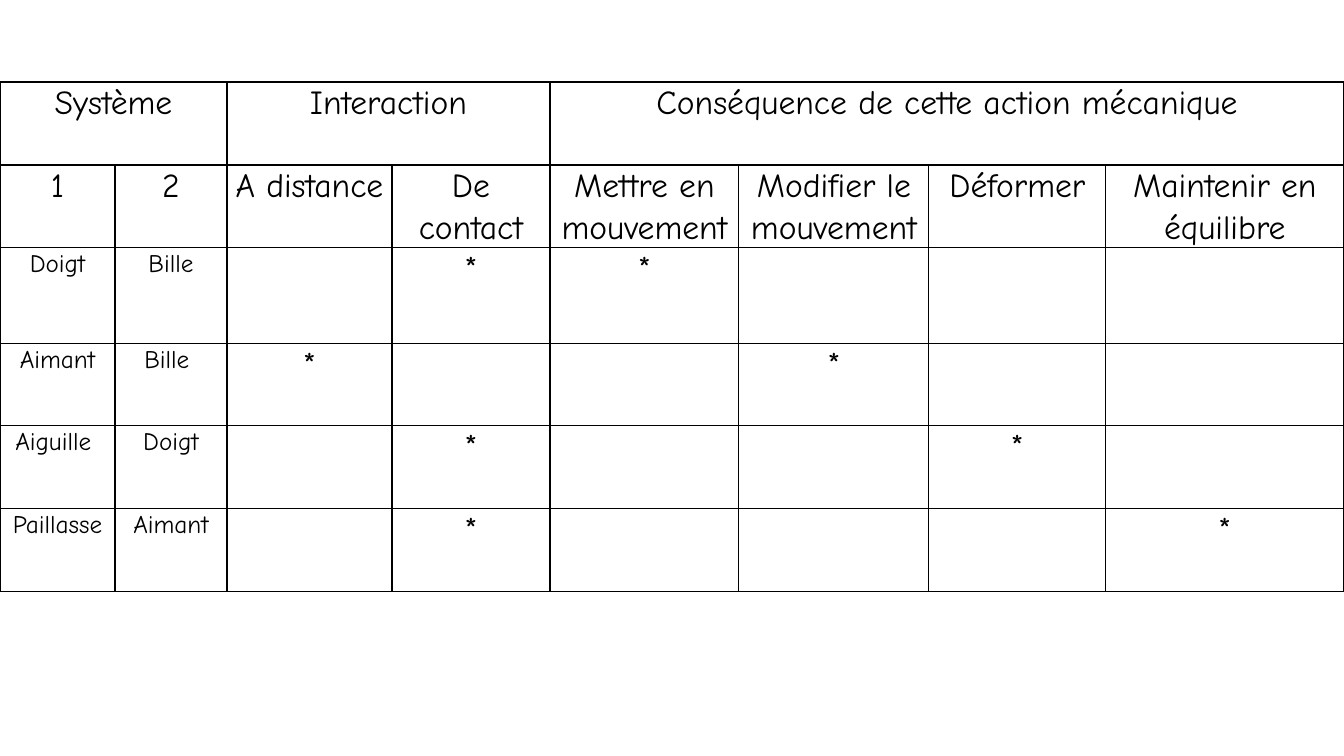
from lxml import etree
from pptx import Presentation
from pptx.dml.color import RGBColor
from pptx.enum.text import MSO_ANCHOR, PP_ALIGN
from pptx.oxml.ns import qn
from pptx.util import Pt

EMU_PER_PX = 914400 / 100.8
CENTER = PP_ALIGN.CENTER
TOP = MSO_ANCHOR.TOP
FONT = "Comic Neue"
COLOURS = {"ink": "000000", "paper": "FFFFFF"}

TABLE_TOP = 82
COLUMN_WIDTHS = [115, 112, 165, 158, 189, 190, 177, 238]
ROW_HEIGHTS = [83, 82, 96, 82, 83, 83]
SIDE_MARGIN = 7
HEADING_SIZE = 24
NAME_SIZE = 18

# Heading, first column, last column
GROUPS = [
    ("Système", 0, 1),
    ("Interaction", 2, 3),
    ("Conséquence de cette action mécanique", 4, 7),
]
HEADINGS = [
    "1", "2", "A distance", "De contact", "Mettre en mouvement",
    "Modifier le mouvement", "Déformer", "Maintenir en équilibre",
]
# System 1, system 2, columns marked with an asterisk
SYSTEMS = [
    ("Doigt", "Bille", (3, 4)),
    ("Aimant", "Bille ", (2, 5)),
    ("Aiguille ", "Doigt", (3, 6)),
    ("Paillasse", "Aimant", (3, 7)),
]


def px(length):
    return round(length * EMU_PER_PX)


def add_border(cell):
    """Draw a one-point line on all four sides of the cell."""
    properties = cell._tc.get_or_add_tcPr()
    for position, side in enumerate(("a:lnL", "a:lnR", "a:lnT", "a:lnB")):
        line = etree.Element(qn(side), w=str(Pt(1)))
        fill = etree.SubElement(line, qn("a:solidFill"))
        etree.SubElement(fill, qn("a:srgbClr"), val=COLOURS["ink"])
        properties.insert(position, line)


def format_cell(cell):
    cell.fill.solid()
    cell.fill.fore_color.rgb = RGBColor.from_string(COLOURS["paper"])
    cell.margin_left = cell.margin_right = px(SIDE_MARGIN)
    cell.margin_top = cell.margin_bottom = 0
    cell.vertical_anchor = TOP
    add_border(cell)


def write_cell(cell, text, size):
    paragraph = cell.text_frame.paragraphs[0]
    paragraph.alignment = CENTER
    paragraph.line_spacing = 1.07
    run = paragraph.add_run()
    run.text = text
    run.font.name = FONT
    run.font.size = Pt(size)
    run.font.color.rgb = RGBColor.from_string(COLOURS["ink"])


def add_grid(slide):
    """Add the empty ruled table across the whole slide width."""
    frame = slide.shapes.add_table(
        len(ROW_HEIGHTS), len(COLUMN_WIDTHS), 0, px(TABLE_TOP),
        px(sum(COLUMN_WIDTHS)), px(sum(ROW_HEIGHTS)))
    table = frame.table
    table.first_row = False
    table.horz_banding = False
    for column, width in zip(table.columns, COLUMN_WIDTHS):
        column.width = px(width)
    for row, height in zip(table.rows, ROW_HEIGHTS):
        row.height = px(height)
    for cell in table.iter_cells():
        format_cell(cell)
    return table


def fill_headings(table):
    for text, first, last in GROUPS:
        table.cell(0, first).merge(table.cell(0, last))
        write_cell(table.cell(0, first), text, HEADING_SIZE)
    for column, text in enumerate(HEADINGS):
        write_cell(table.cell(1, column), text, HEADING_SIZE)


def fill_systems(table):
    for row, (first, second, marked) in enumerate(SYSTEMS, start=2):
        write_cell(table.cell(row, 0), first, NAME_SIZE)
        write_cell(table.cell(row, 1), second, NAME_SIZE)
        for column in marked:
            write_cell(table.cell(row, column), "*", HEADING_SIZE)


def main():
    presentation = Presentation()
    presentation.slide_width = px(1344)
    presentation.slide_height = px(756)
    slide = presentation.slides.add_slide(presentation.slide_layouts[6])
    table = add_grid(slide)
    fill_headings(table)
    fill_systems(table)
    presentation.save("out.pptx")


if __name__ == "__main__":
    main()
